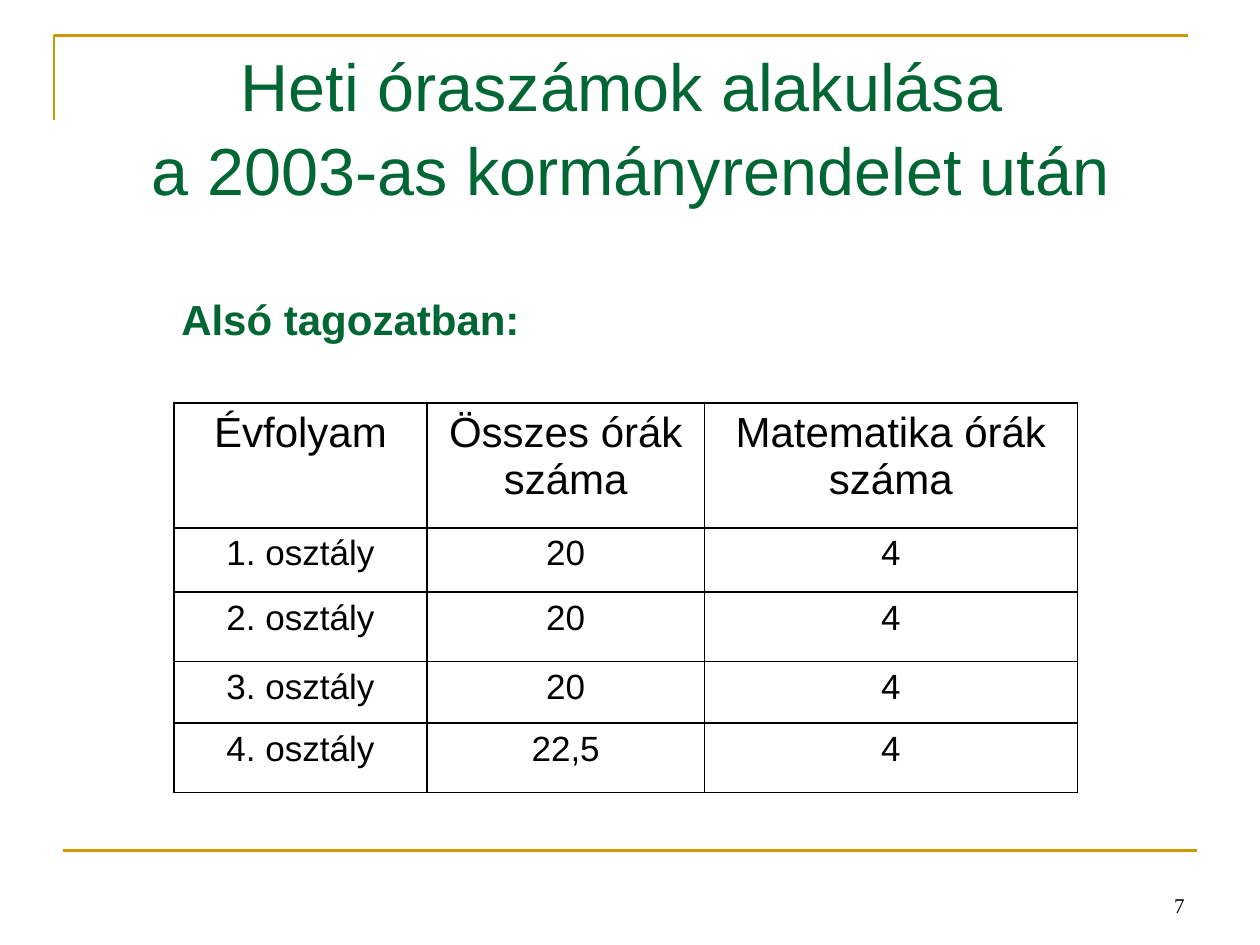
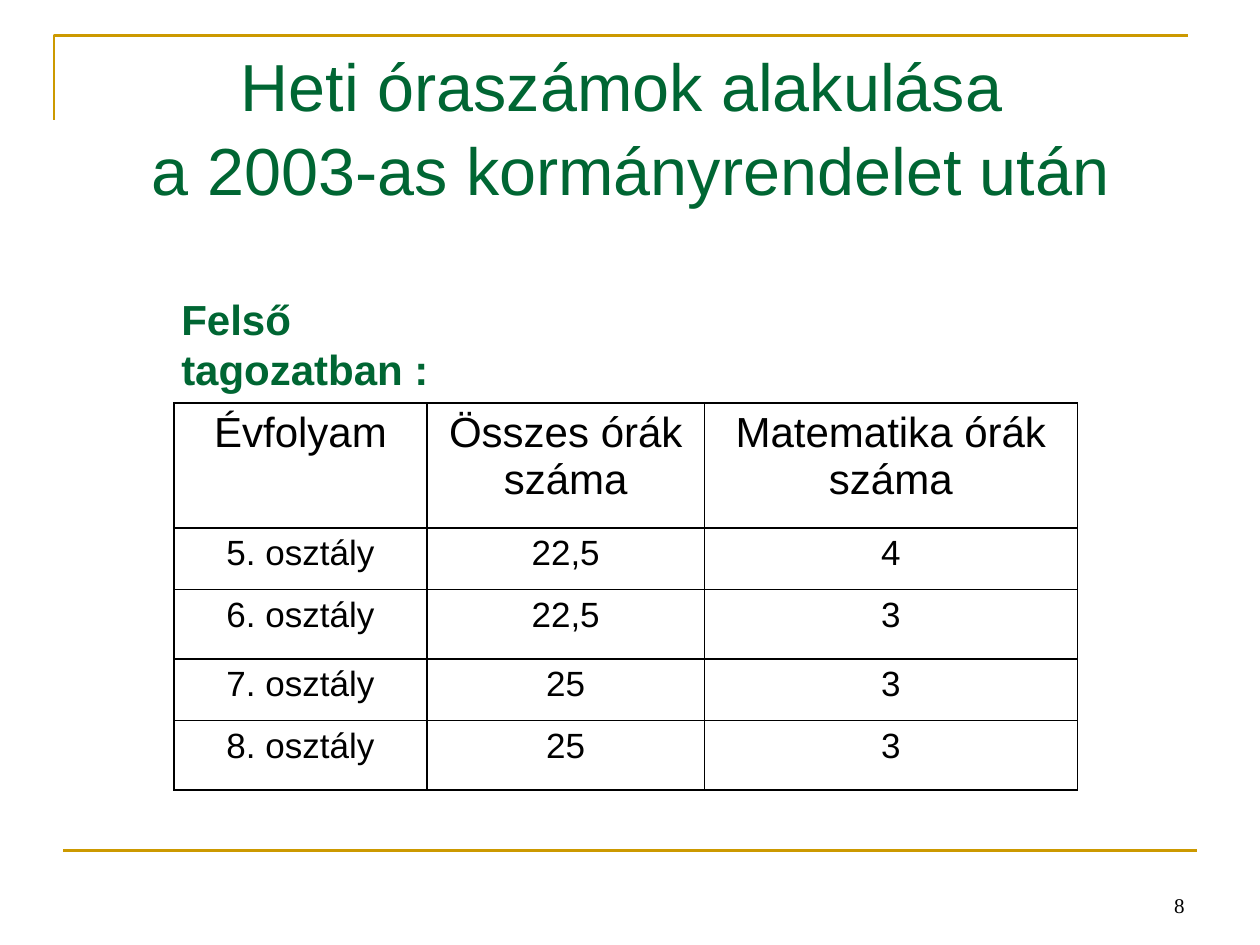
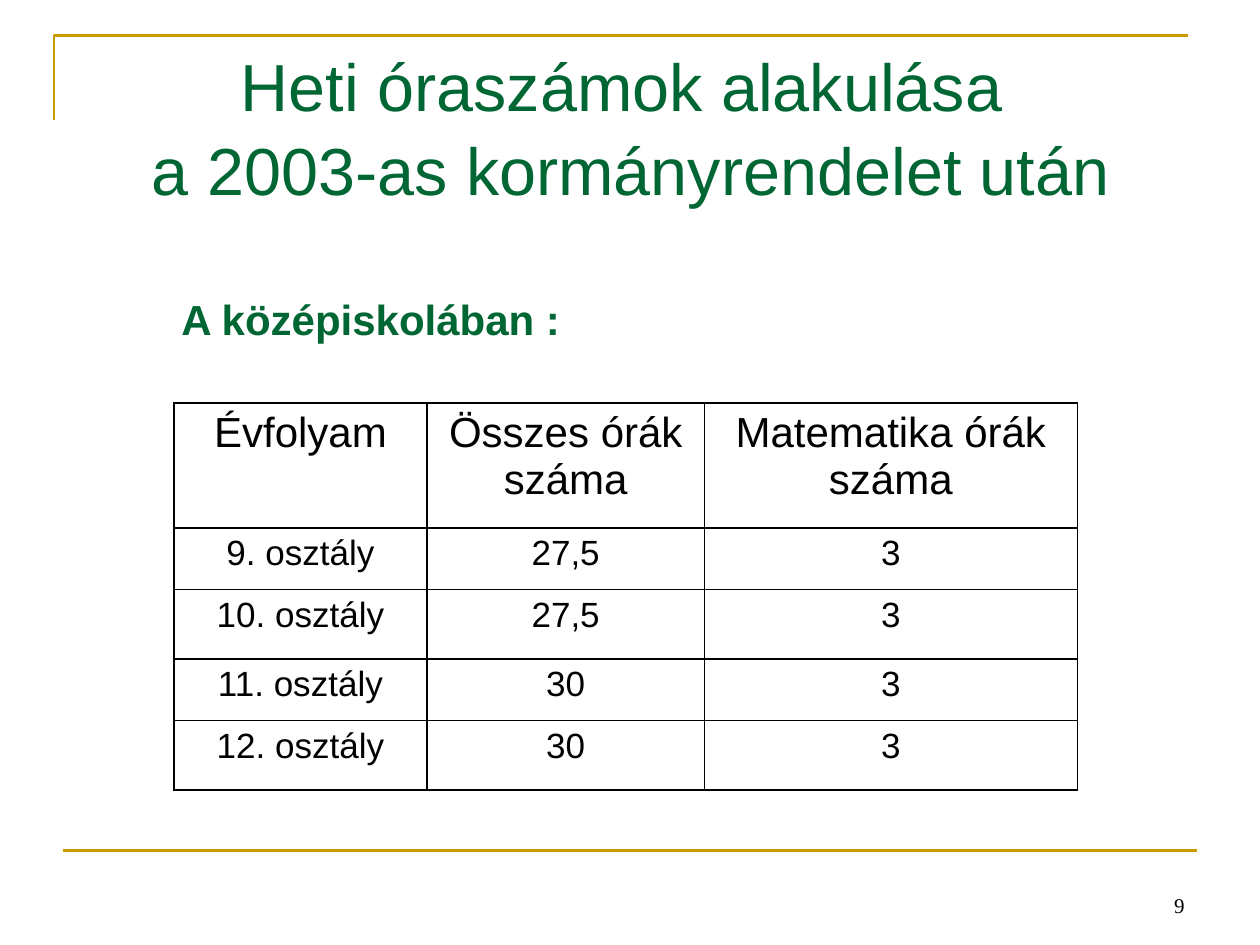
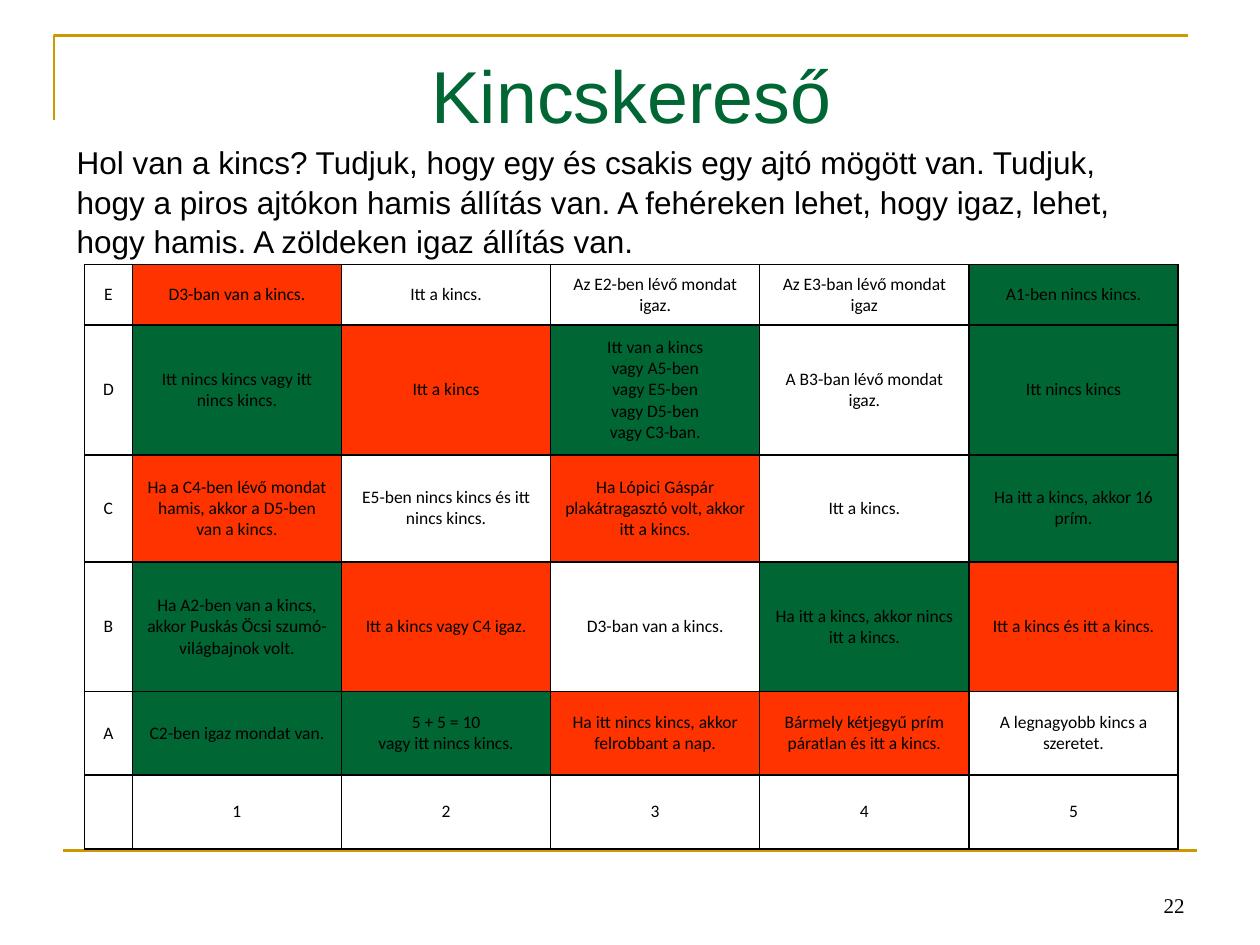
"""Build four slides on weekly lesson counts and a treasure hunt puzzle."""
from copy import deepcopy
from dataclasses import dataclass

from lxml.etree import SubElement
from pptx import Presentation
from pptx.dml.color import RGBColor
from pptx.enum.shapes import MSO_CONNECTOR
from pptx.enum.text import MSO_ANCHOR, MSO_AUTO_SIZE, PP_ALIGN
from pptx.oxml.ns import qn
from pptx.util import Inches, Pt


@dataclass(frozen=True)
class Theme:
    green: str = "006633"
    red: str = "FF3300"
    gold: str = "CC9900"
    ink: str = "000000"
    font: str = "Arial"
    board_font: str = "Calibri"
    number_font: str = "Times New Roman"
    title: int = 38
    short_title: int = 42
    heading: int = 24
    body: int = 20
    intro: int = 18
    number: int = 12
    door: int = 10


theme = Theme()


def write(frame, text, size, color=theme.ink, font=theme.font, align=PP_ALIGN.CENTER, bold=None):
    paragraph = frame.paragraphs[0]
    paragraph.alignment = align
    for index, line in enumerate(text.split("\n")):
        if index:
            line_break = SubElement(paragraph._p, qn("a:br"))
            line_break.append(deepcopy(run._r.get_or_add_rPr()))
        run = paragraph.add_run()
        run.text = line
        run.font.size = Pt(size)
        run.font.name = font
        run.font.bold = bold
        run.font.color.rgb = RGBColor.from_string(color)
    return paragraph


def add_grid(slide, left, top, widths, heights):
    grid = slide.shapes.add_table(
        len(heights), len(widths), Inches(left), Inches(top),
        Inches(sum(widths)), Inches(sum(heights))).table
    grid.first_row = grid.horz_banding = False
    for column, width in zip(grid.columns, widths):
        column.width = Inches(width)
    for row, height in zip(grid.rows, heights):
        row.height = Inches(height)
    for cell in grid.iter_cells():
        properties = cell._tc.get_or_add_tcPr()
        for side in ("a:lnL", "a:lnR", "a:lnT", "a:lnB"):
            border = SubElement(properties, qn(side), w=str(Pt(1)))
            SubElement(SubElement(border, qn("a:solidFill")), qn("a:srgbClr"), val=theme.ink)
        cell.fill.background()
    return grid


lesson_title = "Heti óraszámok alakulása \na 2003-as kormányrendelet után"
lesson_header = ("Évfolyam", "Összes órák száma", "Matematika órák száma")
lessons = [
    (7, "Alsó tagozatban:", 2.89, 0.51, 1, ("20", "20", "20", "22,5"), "4444"),
    (8, "Felső tagozatban :", 3.12, 0.49, 5, ("22,5", "22,5", "25", "25"), "4333"),
    (9, "A középiskolában :", 3.22, 0.49, 9, ("27,5", "27,5", "30", "30"), "3333"),
]
intro_text = (
    "Hol van a kincs? Tudjuk, hogy egy és csakis egy ajtó mögött van. "
    "Tudjuk, hogy a piros ajtókon hamis állítás van. A fehéreken lehet, hogy igaz, "
    "lehet, hogy hamis. A zöldeken igaz állítás van."
)
door_fills = {"R": theme.red, "G": theme.green}
doors = [
    ("E", 0.48, "RWWWG", (
        "D3-ban van a kincs.", "Itt a kincs.", "Az E2-ben lévő mondat igaz.",
        "Az E3-ban lévő mondat igaz", "A1-ben nincs kincs.")),
    ("D", 1.03, "GRGWG", (
        "Itt nincs kincs vagy itt nincs kincs.", "Itt a kincs",
        "Itt van a kincs\nvagy A5-ben\nvagy E5-ben\nvagy D5-ben\nvagy C3-ban.",
        "A B3-ban lévő mondat igaz.", "Itt nincs kincs")),
    ("C", 0.85, "RWRWG", (
        "Ha a C4-ben lévő mondat hamis, akkor a D5-ben van a kincs.",
        "E5-ben nincs kincs és itt nincs kincs.",
        "Ha Lópici Gáspár plakátragasztó volt, akkor itt a kincs.",
        "Itt a kincs.", "Ha itt a kincs, akkor 16 prím.")),
    ("B", 1.03, "GRWGR", (
        "Ha A2-ben van a kincs, akkor Puskás Öcsi szumó-világbajnok volt.",
        "Itt a kincs vagy C4 igaz.", "D3-ban van a kincs.",
        "Ha itt a kincs, akkor nincs itt a kincs.", "Itt a kincs és itt a kincs.")),
    ("A", 0.66, "GGRRW", (
        "C2-ben igaz mondat van.", "5 + 5 = 10\nvagy itt nincs kincs.",
        "Ha itt nincs kincs, akkor felrobbant a nap.",
        "Bármely kétjegyű prím páratlan és itt a kincs.",
        "A legnagyobb kincs a szeretet.")),
    ("", 0.59, "WWWWW", "12345"),
]

deck = Presentation()
deck.slide_width, deck.slide_height = Inches(10), Inches(7.5)

headings = [(lesson[0], lesson_title, theme.title, 1.05) for lesson in lessons]
headings.append((22, "Kincskereső", theme.short_title, 1.1))
for page, title, title_size, title_spacing in headings:
    slide = deck.slides.add_slide(deck.slide_layouts[6])

    corner_path = slide.shapes.build_freeform(Inches(0.43), Inches(0.95))
    corner_path.add_line_segments(
        [(Inches(0.43), Inches(0.28)), (Inches(9.43), Inches(0.28))], close=False)
    corner = corner_path.convert_to_shape()
    corner.shadow.inherit = False
    corner.fill.background()
    footer_rule = slide.shapes.add_connector(
        MSO_CONNECTOR.STRAIGHT, Inches(0.5), Inches(6.75), Inches(9.5), Inches(6.75))
    SubElement(footer_rule._element.spPr, qn("a:effectLst"))
    for rule in (corner, footer_rule):
        rule.line.color.rgb = RGBColor.from_string(theme.gold)
        rule.line.width = Pt(1.5)

    page_number = slide.shapes.add_textbox(
        Inches(7.17), Inches(6.83), Inches(2.33), Inches(0.5)).text_frame
    page_number.word_wrap = True
    page_number.vertical_anchor = MSO_ANCHOR.BOTTOM
    write(page_number, str(page), theme.number, font=theme.number_font, align=PP_ALIGN.RIGHT)

    heading = slide.shapes.add_textbox(
        Inches(0.51), Inches(0.28), Inches(9), Inches(1.25)).text_frame
    heading.word_wrap = True
    write(heading, title, title_size, theme.green).line_spacing = title_spacing

for slide, lesson in zip(deck.slides, lessons):
    _, school, school_width, first_height, first_grade, totals, maths = lesson
    hours = add_grid(slide, 1.38, 3.2, (2.01, 2.2, 2.96), (0.99, first_height, 0.55, 0.49, 0.55))
    grades = [f"{first_grade + step}. osztály" for step in range(4)]
    for row, values in enumerate([lesson_header, *zip(grades, totals, maths)]):
        for column, value in enumerate(values):
            write(hours.cell(row, column).text_frame, value,
                  theme.body if row else theme.heading)

    school_label = slide.shapes.add_textbox(
        Inches(1.34), Inches(2.28), Inches(school_width), Inches(0.5)).text_frame
    school_label.word_wrap = False
    school_label.auto_size = MSO_AUTO_SIZE.SHAPE_TO_FIT_TEXT
    write(school_label, school, theme.heading, theme.green, align=PP_ALIGN.LEFT, bold=True)

puzzle = deck.slides[3]
intro = puzzle.shapes.add_textbox(
    Inches(0.51), Inches(1.07), Inches(8.66), Inches(1)).text_frame
intro.word_wrap = True
intro.auto_size = MSO_AUTO_SIZE.SHAPE_TO_FIT_TEXT
write(intro, intro_text, theme.intro, align=PP_ALIGN.LEFT).line_spacing = 1.05

board = add_grid(puzzle, 0.67, 2.1, [0.38] + [1.66] * 5, [door_row[1] for door_row in doors])
for row, (letter, _, fills, claims) in enumerate(doors):
    for column, (fill, claim) in enumerate(zip("W" + fills, (letter, *claims))):
        door = board.cell(row, column)
        door.vertical_anchor = MSO_ANCHOR.MIDDLE
        if claim:
            write(door.text_frame, claim, theme.door, font=theme.board_font)
        if fill in door_fills:
            door.fill.solid()
            door.fill.fore_color.rgb = RGBColor.from_string(door_fills[fill])

deck.save("out.pptx")
